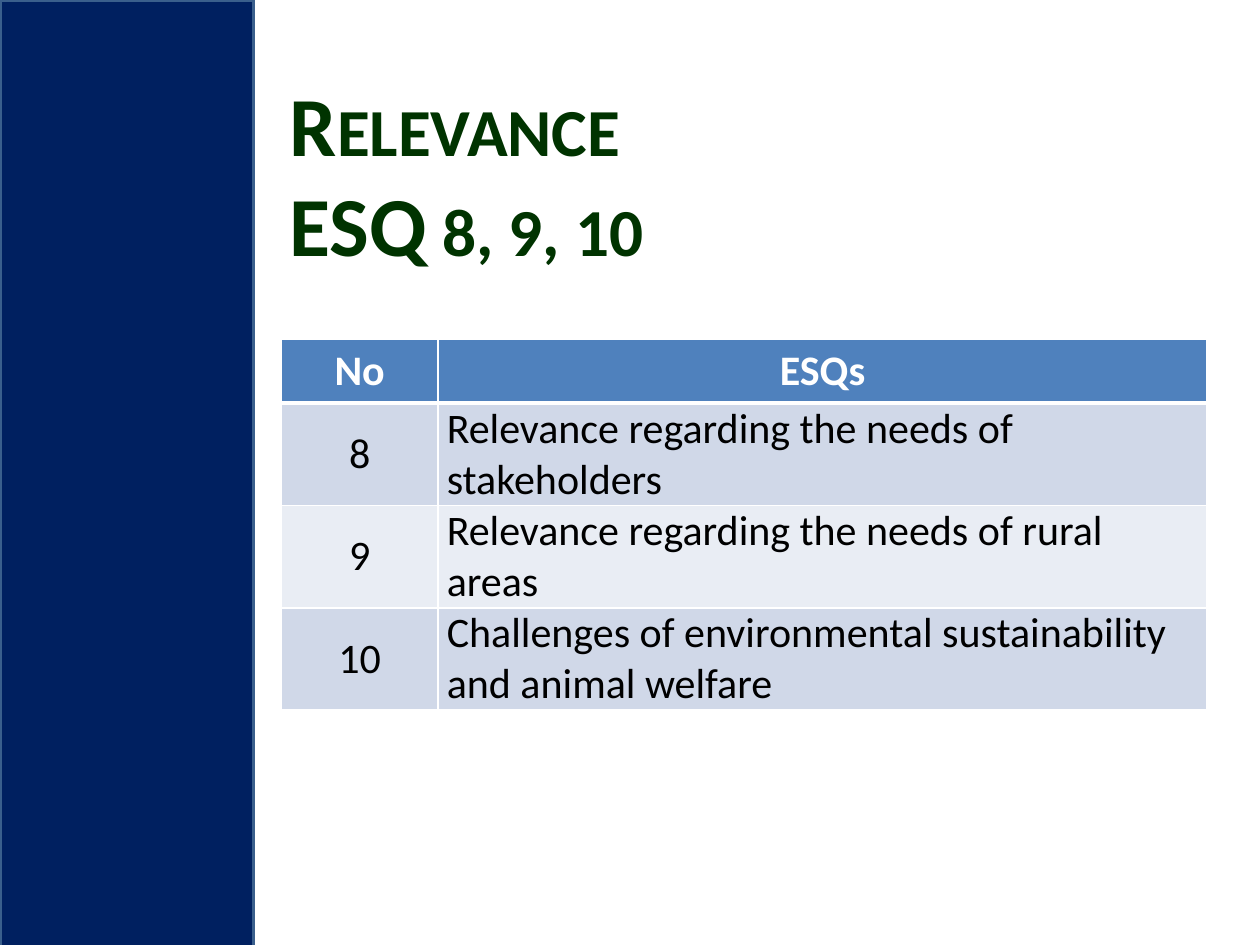
from lxml import etree
from pptx import Presentation
from pptx.dml.color import RGBColor
from pptx.enum.shapes import MSO_SHAPE
from pptx.enum.text import MSO_ANCHOR, PP_ALIGN
from pptx.oxml.ns import qn
from pptx.util import Pt

RECT = MSO_SHAPE.RECTANGLE
MIDDLE, TOP = MSO_ANCHOR.MIDDLE, MSO_ANCHOR.TOP
LEFT, CENTER = PP_ALIGN.LEFT, PP_ALIGN.CENTER


def rgb(value):
    return RGBColor.from_string(value)


def write(tf, text, size=24, color="000000", bold=False, align=LEFT,
          space=0, small_caps=False, font="Calibri"):
    p = tf.paragraphs[0]
    p.alignment = align
    if space:
        p.space_before = p.space_after = Pt(space)
    for i, line in enumerate(text.split("\n")):
        if i:
            p.add_line_break()
        r = p.add_run()
        r.text = line
        r.font.name, r.font.size, r.font.bold = font, Pt(size), bold
        r.font.color.rgb = rgb(color)
        if small_caps:
            r.font._element.set("cap", "small")


def set_border(cell, side, width, color):
    tcPr = cell._tc.get_or_add_tcPr()
    ln = etree.SubElement(tcPr, qn(f"a:ln{side}"), w=str(Pt(width)))
    fill = etree.SubElement(ln, qn("a:solidFill"))
    etree.SubElement(fill, qn("a:srgbClr"), val=color)


class Deck:
    """Holds the slide style and the current slide."""

    navy, edge, green, white = "002060", "3A5F8C", "003300", "FFFFFF"
    header, bands = "4F81BD", ("D0D8E8", "E9EDF4")

    def __init__(self, width, height):
        self.prs = Presentation()
        self.prs.slide_width, self.prs.slide_height = Pt(width), Pt(height)
        self.s = self.prs.slides.add_slide(self.prs.slide_layouts[6])

    def sidebar(self, *box):
        sp = self.s.shapes.add_shape(RECT, *map(Pt, box))
        sp.shadow.inherit = False
        sp.fill.solid()
        sp.fill.fore_color.rgb = rgb(self.navy)
        sp.line.color.rgb = rgb(self.edge)
        sp.line.width = Pt(2)

    def title(self, text, *box):
        tf = self.s.shapes.add_textbox(*map(Pt, box)).text_frame
        tf.word_wrap = True
        tf.vertical_anchor = MIDDLE
        write(tf, text, size=48, color=self.green, bold=True, small_caps=True)

    def cell(self, cell, text, row, col):
        is_header = row == 0
        for side in "LRTB":
            width = 3 if (is_header and side == "B") or (row == 1 and side == "T") else 1
            set_border(cell, side, width, self.white)
        cell.fill.solid()
        cell.fill.fore_color.rgb = rgb(self.header if is_header else self.bands[(row - 1) % 2])
        cell.vertical_anchor = TOP if is_header else MIDDLE
        if not is_header:
            cell.margin_left = cell.margin_right = Pt(5)
            cell.margin_top = cell.margin_bottom = 0
        write(cell.text_frame, text, bold=is_header,
              color=self.white if is_header else "000000",
              align=CENTER if is_header or col == 0 else LEFT,
              space=6 if col == 0 and not is_header else 0)

    def table(self, rows, left, top, widths, heights):
        table = self.s.shapes.add_table(
            len(rows), len(widths), Pt(left), Pt(top), Pt(sum(widths)), Pt(sum(heights))).table
        for column, width in zip(table.columns, widths):
            column.width = Pt(width)
        for i, (values, height) in enumerate(zip(rows, heights)):
            table.rows[i].height = Pt(height)
            for j, text in enumerate(values):
                self.cell(table.cell(i, j), text, i, j)


def main():
    deck = Deck(720, 540)
    deck.sidebar(0, 0, 145, 541)
    deck.title("Relevance\nESQ 8, 9, 10", 158.5, 26, 529, 145.5)
    rows = [
        ("No", "ESQs"),
        ("8", "Relevance regarding the needs of stakeholders"),
        ("9", "Relevance regarding the needs of rural areas"),
        ("10", "Challenges of environmental sustainability and animal welfare"),
    ]
    deck.table(rows, 160.8, 193.9, (89.5, 439.5), (36.5, 58.5, 58.5, 58.5))
    deck.prs.save("out.pptx")


if __name__ == "__main__":
    main()
